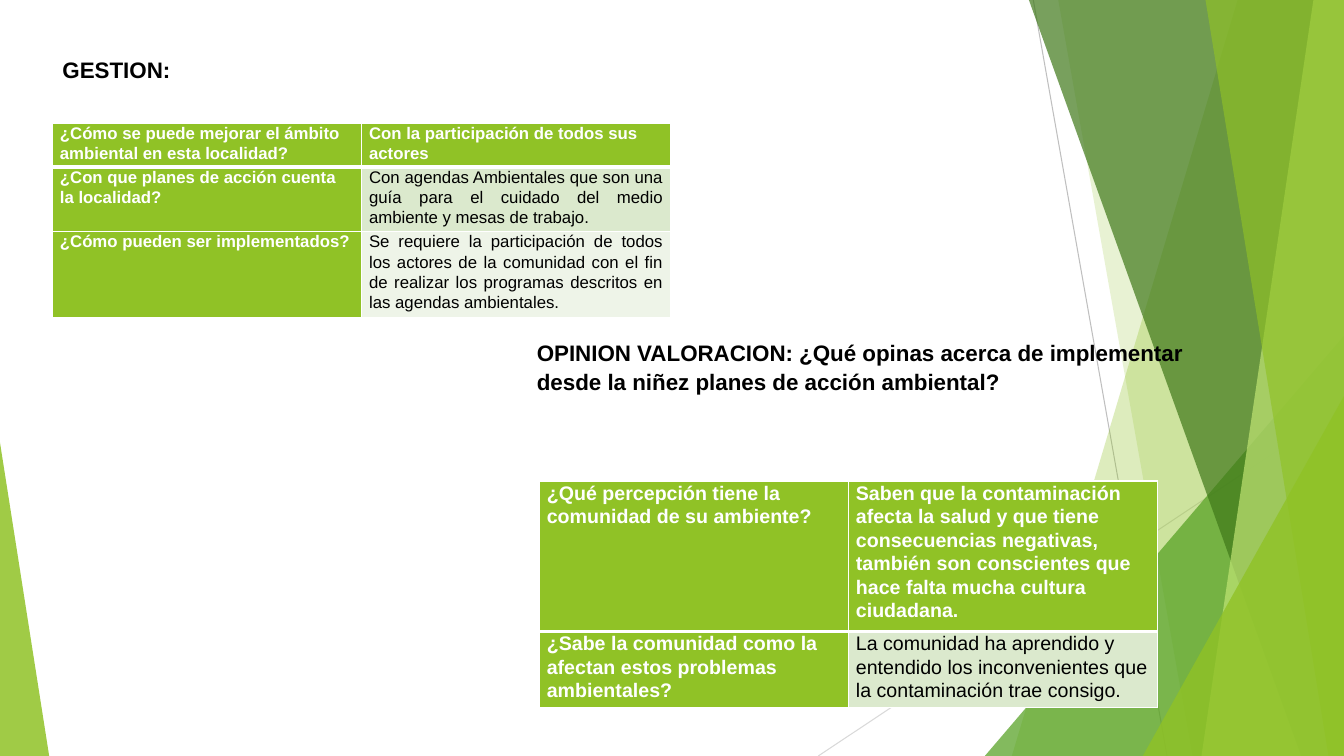
from lxml import etree
from pptx import Presentation
from pptx import util as u
from pptx.dml.color import RGBColor
from pptx.enum import shapes, text
from pptx.oxml import ns

WIDTH, HEIGHT = 33.87, 19.05
GREEN, WHITE, BLACK = "90C226", "FFFFFF", "000000"
LIGHT_ROWS = ["DBE9CD", "EEF4E8"]


def rgb(value):
    return RGBColor.from_string(value)


class SlideBuilder:
    font = "Arial"
    spacing = 1.07

    def __init__(self, slide):
        self.s = slide

    def style(self, p, size, color, bold, align=text.PP_ALIGN.LEFT):
        p.alignment = align
        p.line_spacing = self.spacing
        p.font.name = self.font
        p.font.size = u.Pt(size)
        p.font.bold = bold
        p.font.color.rgb = rgb(color)

    def paint(self, sp, color, opacity):
        sp.shadow.inherit = False
        sp.line.fill.background()
        sp.fill.solid()
        sp.fill.fore_color.rgb = rgb(color)
        clr = sp.fill._xPr.find(".//" + ns.qn("a:srgbClr"))
        etree.SubElement(clr, ns.qn("a:alpha"), val=str(opacity * 1000))

    def line(self, x1, y1, x2, y2, color):
        c = self.s.shapes.add_connector(
            shapes.MSO_CONNECTOR.STRAIGHT, u.Cm(x1), u.Cm(y1), u.Cm(x2), u.Cm(y2))
        c.line.color.rgb = rgb(color)
        c.line.width = u.Pt(0.75)
        etree.SubElement(c._element.spPr, ns.qn("a:effectLst"))

    def band(self, top_x, bottom_x, color, opacity):
        fb = self.s.shapes.build_freeform(u.Cm(top_x), 0)
        fb.add_line_segments([(u.Cm(x), u.Cm(y)) for x, y in
                              [(WIDTH, 0), (WIDTH, HEIGHT), (bottom_x, HEIGHT)]])
        self.paint(fb.convert_to_shape(), color, opacity)

    def corner(self, left, top, width, apex, color, opacity):
        sp = self.s.shapes.add_shape(
            shapes.MSO_SHAPE.ISOSCELES_TRIANGLE,
            u.Cm(left), u.Cm(top), u.Cm(width), u.Cm(HEIGHT - top))
        sp.adjustments[0] = apex
        self.paint(sp, color, opacity)

    def heading(self, sp, left, top, width, height, words, wrap):
        sp.left, sp.top, sp.width, sp.height = map(u.Cm, (left, top, width, height))
        tf = sp.text_frame
        tf.text = words
        tf.word_wrap = wrap
        tf.auto_size = text.MSO_AUTO_SIZE.NONE
        tf.vertical_anchor = text.MSO_ANCHOR.TOP
        self.style(tf.paragraphs[0], 16, BLACK, True)

    def title(self, *box, words):
        self.heading(self.s.shapes.title, *box, words, False)

    def textbox(self, *box, words):
        sp = self.s.shapes.add_textbox(0, 0, 0, 0)
        self.heading(sp, *box, words, True)

    def border(self, cell, side, width):
        tc_pr = cell._tc.get_or_add_tcPr()
        ln = etree.SubElement(tc_pr, ns.qn("a:ln" + side), w=str(u.Pt(width)))
        fill = etree.SubElement(ln, ns.qn("a:solidFill"))
        etree.SubElement(fill, ns.qn("a:srgbClr"), val=WHITE)

    def table(self, left, top, col_width, heights, rows, size, body_align):
        table = self.s.shapes.add_table(
            len(rows), 2, u.Cm(left), u.Cm(top),
            u.Cm(2 * col_width), u.Cm(sum(heights))).table
        for col in table.columns:
            col.width = u.Cm(col_width)
        for i, (height, row) in enumerate(zip(heights, rows)):
            table.rows[i].height = u.Cm(height)
            for j, words in enumerate(row):
                cell = table.cell(i, j)
                answer = i > 0 and j > 0
                for side in "LRTB":
                    under_header = (i, side) in [(0, "B"), (1, "T")]
                    self.border(cell, side, 3 if under_header else 1)
                cell.fill.solid()
                cell.fill.fore_color.rgb = rgb(LIGHT_ROWS[i - 1] if answer else GREEN)
                cell.margin_left = cell.margin_right = u.Cm(0.19)
                cell.margin_top = cell.margin_bottom = 0
                cell.text = words
                self.style(cell.text_frame.paragraphs[0], size,
                           BLACK if answer else WHITE, not answer,
                           body_align if answer else text.PP_ALIGN.LEFT)


def main():
    prs = Presentation()
    prs.slide_width, prs.slide_height = u.Cm(WIDTH), u.Cm(HEIGHT)
    b = SlideBuilder(prs.slides.add_slide(prs.slide_layouts[5]))

    b.line(26.04, 0, 29.41, HEIGHT, "BFBFBF")
    b.line(WIDTH, 10.24, 20.62, HEIGHT, "D9D9D9")
    b.band(31.19, 25.5, GREEN, 30)
    b.band(26.67, 30.05, GREEN, 20)
    b.corner(24.82, 8.46, 9.05, 1, "54A021", 72)
    b.band(25.93, 32.79, "3F7819", 70)
    b.band(33.1, 30.28, "C0E474", 70)
    b.band(30.38, 33.48, GREEN, 65)
    b.corner(28.8, 9.98, 5.07, 1, GREEN, 80)
    b.corner(0, 11.15, 1.24, 0, GREEN, 85)

    b.title(1.32, 1.24, 3.43, 0.94, words="GESTION:")
    b.table(1.32, 3.1, 7.79, [1.1, 1.63, 2.17], [
        ("¿Cómo se puede mejorar el ámbito ambiental en esta localidad?",
         "Con la participación de todos sus actores"),
        ("¿Con que planes de acción cuenta la localidad?",
         "Con agendas Ambientales que son una guía para el cuidado del medio "
         "ambiente y mesas de trabajo."),
        ("¿Cómo pueden ser implementados?",
         "Se requiere la participación de todos los actores de la comunidad con "
         "el fin de realizar los programas descritos en las agendas ambientales."),
    ], 12, text.PP_ALIGN.JUSTIFY)

    b.textbox(13.28, 8.38, 16.94, 1.68,
              words="OPINION VALORACION: ¿Qué opinas acerca de implementar "
                    "desde la niñez planes de acción ambiental?")
    b.table(13.59, 12.12, 7.79, [3.79, 1.92], [
        ("¿Qué percepción tiene la comunidad de su ambiente?",
         "Saben que la contaminación afecta la salud y que tiene consecuencias "
         "negativas, también son conscientes que hace falta mucha cultura ciudadana."),
        ("¿Sabe la comunidad como la afectan estos problemas ambientales?",
         "La comunidad ha aprendido y entendido los inconvenientes que la "
         "contaminación trae consigo."),
    ], 14, text.PP_ALIGN.LEFT)

    prs.save("out.pptx")


if __name__ == "__main__":
    main()
